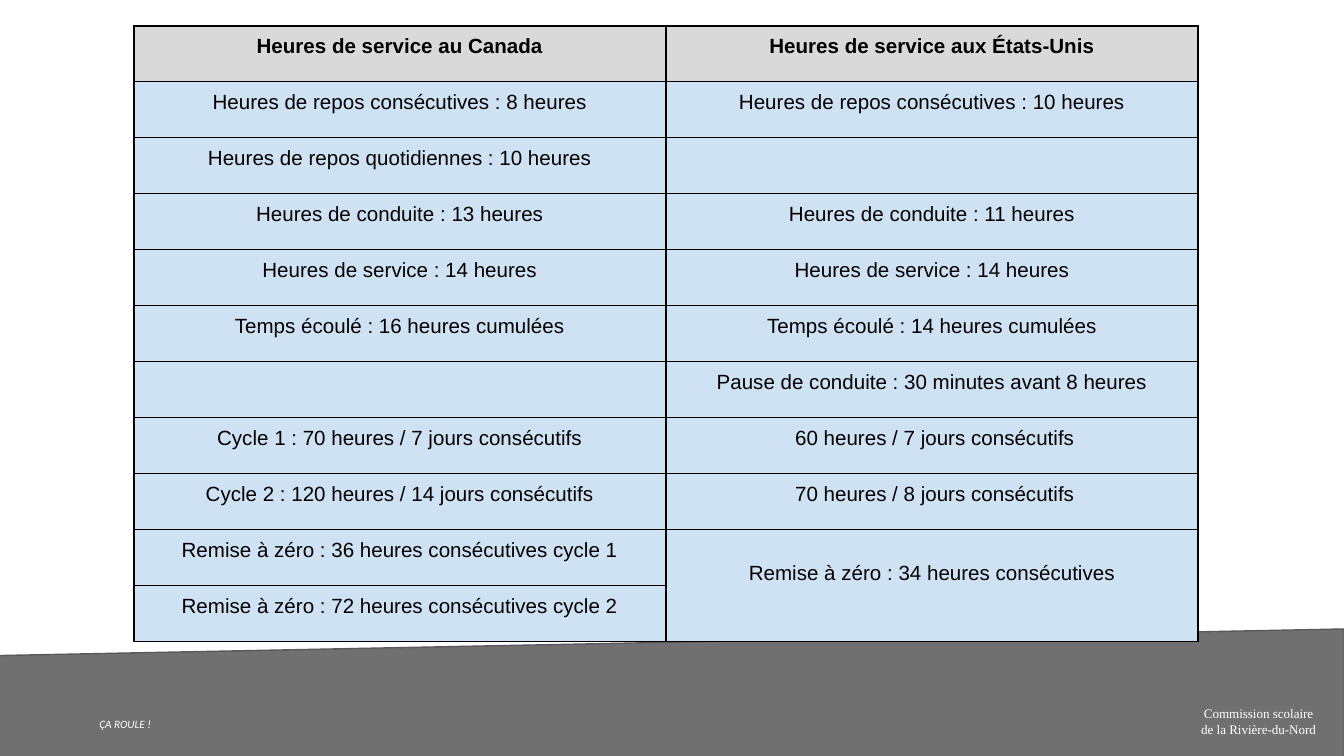
import dataclasses

import lxml.etree
import pptx
import pptx.dml.color
import pptx.enum.shapes
import pptx.enum.text
import pptx.oxml
import pptx.oxml.ns
import pptx.util

WIDTH = pptx.util.Inches(10)
HEIGHT = WIDTH * 9 // 16
ALIGN = pptx.enum.text.PP_ALIGN
ANCHOR = pptx.enum.text.MSO_ANCHOR
BLACK, WHITE = "000000", "FFFFFF"
HEADER_FILL, BODY_FILL = "D9D9D9", "CFE2F3"
CELL_INSET = 0.07
MERGED_TOP_INSET = 0.24

HOURS = [
    ("Heures de service au Canada", "Heures de service aux États-Unis"),
    ("Heures de repos consécutives : 8 heures", "Heures de repos consécutives : 10 heures"),
    ("Heures de repos quotidiennes : 10 heures", ""),
    ("Heures de conduite : 13 heures", "Heures de conduite : 11 heures"),
    ("Heures de service : 14 heures", "Heures de service : 14 heures"),
    ("Temps écoulé : 16 heures cumulées", "Temps écoulé : 14 heures cumulées"),
    ("", "Pause de conduite : 30 minutes avant 8 heures"),
    ("Cycle 1 : 70 heures / 7 jours consécutifs", " 60 heures / 7 jours consécutifs"),
    ("Cycle 2 : 120 heures / 14 jours consécutifs", " 70 heures / 8 jours consécutifs"),
    ("Remise à zéro : 36 heures consécutives cycle 1", "Remise à zéro : 34 heures consécutives"),
    ("Remise à zéro : 72 heures consécutives cycle 2", ""),
]


@dataclasses.dataclass
class PercentArea:
    left: float
    top: float
    width: float
    height: float

    def lengths(self) -> list[int]:
        return [
            round(self.left * WIDTH / 100),
            round(self.top * HEIGHT / 100),
            round(self.width * WIDTH / 100),
            round(self.height * HEIGHT / 100),
        ]


@dataclasses.dataclass
class Caption:
    area: PercentArea
    lines: list[str]
    align: ALIGN
    anchor: ANCHOR
    font: dict


CAPTIONS = [
    Caption(
        PercentArea(87.3, 91.6, 12.7, 5.3),
        ["Commission scolaire", "de la Rivière-du-Nord"],
        ALIGN.CENTER,
        ANCHOR.TOP,
        {"name": "Times New Roman", "size": pptx.util.Pt(7)},
    ),
    Caption(
        PercentArea(6.4, 93.2, 8.1, 5.2),
        ["ÇA ROULE !"],
        ALIGN.LEFT,
        ANCHOR.MIDDLE,
        {"name": "Calibri", "size": pptx.util.Pt(6), "italic": True},
    ),
]


def rgb(code: str) -> pptx.dml.color.RGBColor:
    return pptx.dml.color.RGBColor.from_string(code)


def set_all(target, values: dict) -> None:
    for name, value in values.items():
        setattr(target, name, value)


def paint(fill, code: str) -> None:
    fill.solid()
    fill.fore_color.rgb = rgb(code)


def insets(inches: float) -> dict:
    return {f"margin_{side}": pptx.util.Inches(inches) for side in ("left", "top", "right", "bottom")}


def add_text(paragraph, text: str, align: ALIGN, font: dict, color: str) -> None:
    paragraph.alignment = align
    run = paragraph.add_run()
    run.text = text
    set_all(run.font, font)
    run.font.color.rgb = rgb(color)


def draw_ground(slide) -> None:
    kind = pptx.enum.shapes.MSO_SHAPE.FLOWCHART_MANUAL_INPUT
    ground = slide.shapes.add_shape(kind, *PercentArea(-0.2, 83.2, 100.2, 17.6).lengths())
    ground.shadow.inherit = False
    paint(ground.fill, BLACK)
    color = ground.fill._xPr.find(".//" + pptx.oxml.ns.qn("a:srgbClr"))
    lxml.etree.SubElement(color, pptx.oxml.ns.qn("a:alpha"), val="56000")
    ground.line.color.rgb = rgb("595959")
    ground.line.width = pptx.util.Pt(0.75)


def draw_caption(slide, caption: Caption) -> None:
    frame = slide.shapes.add_textbox(*caption.area.lengths()).text_frame
    set_all(frame, {"word_wrap": True, "vertical_anchor": caption.anchor, **insets(0.1)})
    for index, line in enumerate(caption.lines):
        paragraph = frame.add_paragraph() if index else frame.paragraphs[0]
        add_text(paragraph, line, caption.align, caption.font, WHITE)


def add_borders(cell) -> None:
    properties = cell._tc.get_or_add_tcPr()
    for index, side in enumerate(("lnL", "lnR", "lnT", "lnB")):
        border = pptx.oxml.parse_xml(
            f'<a:{side} {pptx.oxml.ns.nsdecls("a")} w="{pptx.util.Pt(1)}">'
            f'<a:solidFill><a:srgbClr val="{BLACK}"/></a:solidFill></a:{side}>'
        )
        properties.insert(index, border)


def draw_cell(cell, text: str, header: bool) -> None:
    set_all(cell, insets(CELL_INSET))
    paint(cell.fill, HEADER_FILL if header else BODY_FILL)
    add_borders(cell)
    paragraph = cell.text_frame.paragraphs[0]
    if text:
        font = {"name": "Arial", "size": pptx.util.Pt(11), "bold": header}
        add_text(paragraph, text, ALIGN.CENTER, font, BLACK)
    else:
        lxml.etree.SubElement(paragraph._p, pptx.oxml.ns.qn("a:endParaRPr"), sz="1100")


def draw_hours(slide) -> None:
    area = PercentArea(9.95, 3.4, 79.2, 81.5)
    table = slide.shapes.add_table(len(HOURS), len(HOURS[0]), *area.lengths()).table
    set_all(table, {"first_row": False, "horz_banding": False})
    for row, texts in enumerate(HOURS):
        for column, text in enumerate(texts):
            draw_cell(table.cell(row, column), text, row == 0)
    last = len(HOURS) - 1
    american_reset = table.cell(last - 1, 1)
    american_reset.merge(table.cell(last, 1))
    american_reset.margin_top = pptx.util.Inches(MERGED_TOP_INSET)


def main() -> None:
    deck = pptx.Presentation()
    set_all(deck, {"slide_width": WIDTH, "slide_height": HEIGHT})
    slide = deck.slides.add_slide(deck.slide_layouts[6])
    draw_ground(slide)
    for caption in CAPTIONS:
        draw_caption(slide, caption)
    draw_hours(slide)
    deck.save("out.pptx")


if __name__ == "__main__":
    main()
